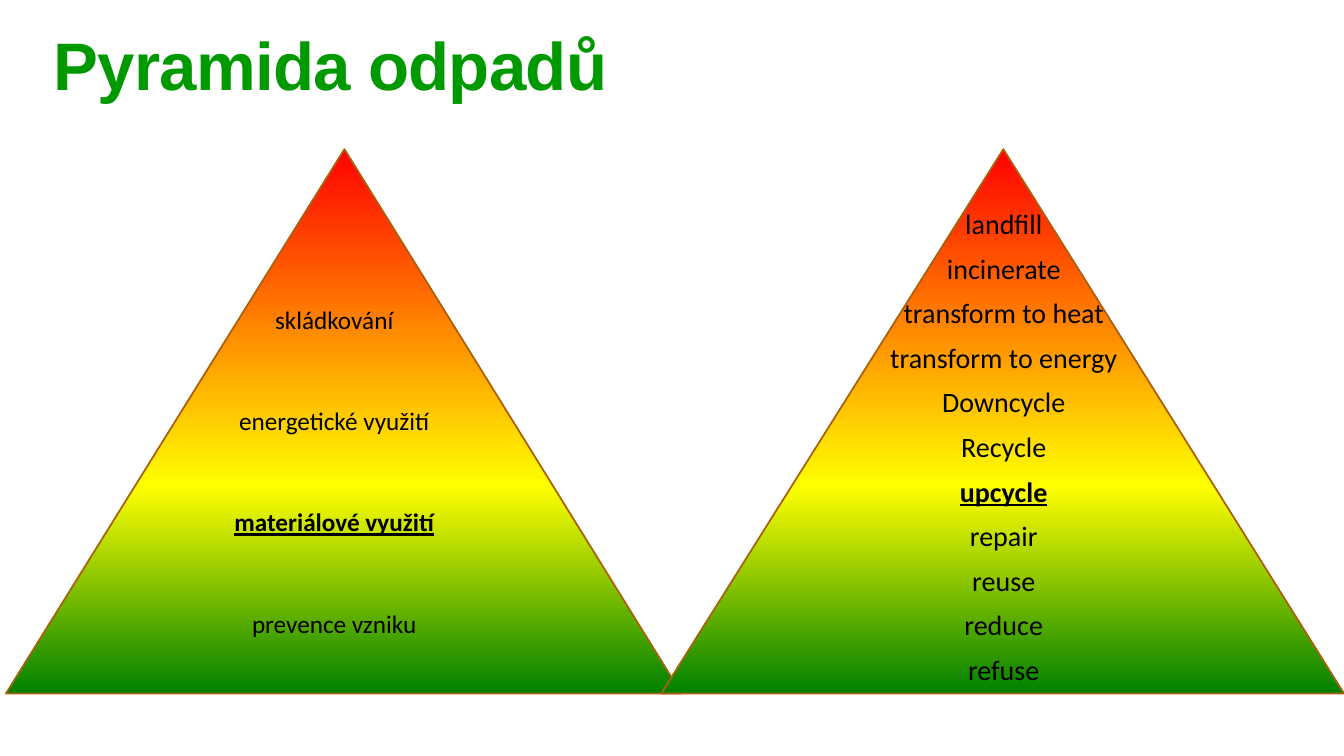
"""Build a slide with two waste hierarchy pyramids."""
import copy

import pptx
import pptx.dml.color
import pptx.enum.shapes
import pptx.enum.text
import pptx.oxml.ns
import pptx.util

TITLE = "Pyramida odpadů"
COLORS = {"title": "009900", "label": "000000", "outline": "A9610D"}
GRADIENT = [(0, "FF0000"), (0.62, "FFFF00"), (1, "008000")]
NO_GRID_STYLE = "{2D5ABB26-0587-4C30-8999-92F81FD0307C}"
SLIDE_SIZE = (13.33, 7.5)
PYRAMID_TOP, PYRAMID_HEIGHT = 1.48, 5.4
PYRAMIDS = [
    {
        "left": 0.06, "width": 6.7,
        "levels_box": (0.73, 2.68, 5.17, 4.02), "size": 18, "insets": (0.08, 0.04),
        "levels": ["skládkování", "energetické využití", "materiálové využití",
                   "prevence vzniku"],
        "highlight": "materiálové využití",
    },
    {
        "left": 6.56, "width": 6.77,
        "levels_box": (7.19, 2.01, 5.53, 4.87), "size": 20, "insets": (0.1, 0.05),
        "levels": ["landfill", "incinerate", "transform to heat", "transform to energy",
                   "Downcycle", "Recycle", "upcycle", "repair", "reuse", "reduce",
                   "refuse"],
        "highlight": "upcycle",
    },
]


def inches(*lengths):
    return [pptx.util.Inches(length) for length in lengths]


def rgb(value):
    return pptx.dml.color.RGBColor.from_string(value)


def set_font(paragraph, name, size, color, bold):
    font = paragraph.font
    font.name, font.size, font.bold = name, pptx.util.Pt(size), bold
    font.color.rgb = rgb(color)


def add_title(slide):
    title = slide.shapes.add_textbox(*inches(0.43, 0.18, 10.07, 0.9)).text_frame
    title.word_wrap = True
    title.vertical_anchor = pptx.enum.text.MSO_ANCHOR.BOTTOM
    paragraph = title.paragraphs[0]
    paragraph.line_spacing = 0.85
    run = paragraph.add_run()
    run.text = TITLE
    run._r.get_or_add_rPr().set("spc", "-50")
    set_font(paragraph, "Arial", 48, COLORS["title"], True)


def add_triangle(slide, left, width):
    triangle = slide.shapes.add_shape(
        pptx.enum.shapes.MSO_SHAPE.ISOSCELES_TRIANGLE,
        *inches(left, PYRAMID_TOP, width, PYRAMID_HEIGHT))
    triangle.adjustments[0] = 0.501
    triangle.shadow.inherit = False
    triangle.line.color.rgb = rgb(COLORS["outline"])
    triangle.line.width = pptx.util.Pt(1.25)
    triangle.fill.gradient()
    triangle.fill.gradient_angle = 270
    stop_list = triangle._element.find(".//" + pptx.oxml.ns.qn("a:gsLst"))
    stop_list.append(copy.deepcopy(stop_list[0]))
    for stop, (position, color) in zip(triangle.fill.gradient_stops, GRADIENT):
        stop.position = position
        stop.color.rgb = rgb(color)


def add_levels(slide, pyramid):
    levels = pyramid["levels"]
    frame = slide.shapes.add_table(len(levels), 1, *inches(*pyramid["levels_box"]))
    frame._element.find(".//" + pptx.oxml.ns.qn("a:tableStyleId")).text = NO_GRID_STYLE
    table = frame.table
    table.first_row = table.horz_banding = False
    side, edge = inches(*pyramid["insets"])
    for cell, level in zip(table.iter_cells(), levels):
        cell.fill.background()
        cell.margin_left = cell.margin_right = side
        cell.margin_top = cell.margin_bottom = edge
        cell.vertical_anchor = pptx.enum.text.MSO_ANCHOR.MIDDLE
        cell.text = level
        paragraph = cell.text_frame.paragraphs[0]
        paragraph.alignment = pptx.enum.text.PP_ALIGN.CENTER
        highlighted = level == pyramid["highlight"]
        set_font(paragraph, "Calibri", pyramid["size"], COLORS["label"], highlighted)
        paragraph.font.underline = highlighted


def main():
    deck = pptx.Presentation()
    deck.slide_width, deck.slide_height = inches(*SLIDE_SIZE)
    slide = deck.slides.add_slide(deck.slide_layouts[6])
    add_title(slide)
    for pyramid in PYRAMIDS:
        add_triangle(slide, pyramid["left"], pyramid["width"])
        add_levels(slide, pyramid)
    deck.save("out.pptx")


if __name__ == "__main__":
    main()
